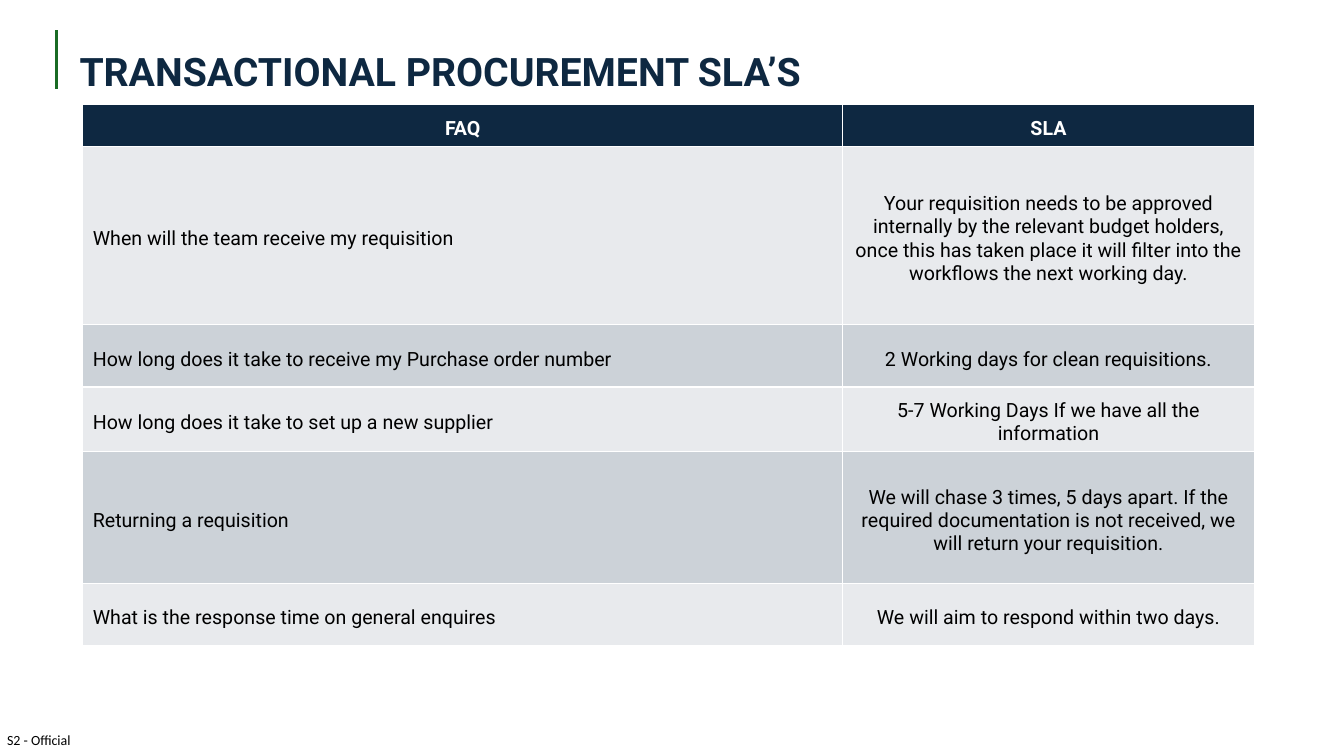
from lxml.etree import SubElement
from pptx import Presentation
from pptx.dml.color import RGBColor
from pptx.enum.shapes import MSO_CONNECTOR
from pptx.enum.text import MSO_ANCHOR, PP_ALIGN
from pptx.oxml.ns import qn
from pptx.util import Inches, Pt

COLORS = {
    "navy": "0E2841",
    "green": "196B24",
    "white": "FFFFFF",
    "black": "000000",
    "light": "E8EAED",
    "dark": "CCD2D8",
}
FORMATS = {
    "title": {"name": "Roboto", "size": Pt(28), "bold": True},
    "header": {"name": "Roboto", "size": Pt(14), "bold": True},
    "body": {"name": "Roboto", "size": Pt(14), "bold": False},
    "label": {"name": "Calibri", "size": Pt(10), "bold": False},
}
COLUMN_WIDTHS = [7.54, 4.08]
ROW_HEIGHTS = [0.41, 1.77, 0.62, 0.62, 1.31, 0.62]
ROWS = [
    ("FAQ", "SLA"),
    ("When will the team receive my requisition",
     "Your requisition needs to be approved internally by the relevant budget "
     "holders, once this has taken place it will filter into the workflows "
     "the next working day."),
    ("How long does it take to receive my Purchase order number",
     "2 Working days for clean requisitions."),
    ("How long does it take to set up a new supplier",
     "5-7 Working Days If we have all the information"),
    ("Returning a requisition",
     "We will chase 3 times, 5 days apart. If the required documentation is "
     "not received, we will return your requisition."),
    ("What is the response time on general enquires",
     "We will aim to respond within two days."),
]


def rgb(color):
    return RGBColor.from_string(COLORS[color])


def set_attributes(target, values):
    for name, value in values.items():
        setattr(target, name, value)


def set_margins(target, margins):
    for side, margin in zip(("left", "top", "right", "bottom"), margins):
        setattr(target, f"margin_{side}", Inches(margin))


def write_text(paragraph, text, style, color):
    paragraph.text = text
    set_attributes(paragraph.font, FORMATS[style])
    paragraph.font.color.rgb = rgb(color)


def add_text(slide, box, text, style, color, margins, wrap, anchor):
    shape = slide.shapes.add_textbox(*map(Inches, box))
    frame = shape.text_frame
    set_attributes(frame, {"word_wrap": wrap, "vertical_anchor": anchor})
    set_margins(frame, margins)
    write_text(frame.paragraphs[0], text, style, color)
    return frame.paragraphs[0]


def add_line(slide, start, end, color, width):
    connector = slide.shapes.add_connector(
        MSO_CONNECTOR.STRAIGHT, *map(Inches, start + end))
    connector.line.color.rgb = rgb(color)
    connector.line.width = Pt(width)
    SubElement(connector._element.spPr, qn("a:effectLst"))


def add_borders(cell, color, width):
    properties = cell._tc.get_or_add_tcPr()
    for side in ("lnL", "lnR", "lnT", "lnB"):
        line = SubElement(properties, qn(f"a:{side}"), w=str(Pt(width)))
        fill = SubElement(line, qn("a:solidFill"))
        SubElement(fill, qn("a:srgbClr"), val=COLORS[color])


def fill_cell(cell, text, row, column):
    is_header = row == 0
    add_borders(cell, "white", 1)
    cell.fill.solid()
    cell.fill.fore_color.rgb = rgb(
        "navy" if is_header else "light" if row % 2 else "dark")
    cell.vertical_anchor = MSO_ANCHOR.MIDDLE
    set_margins(cell, (0.1, 0.12, 0.1, 0.05))
    paragraph = cell.text_frame.paragraphs[0]
    write_text(paragraph, text, "header" if is_header else "body",
               "white" if is_header else "black")
    centred = is_header or column == 1
    paragraph.alignment = PP_ALIGN.CENTER if centred else PP_ALIGN.LEFT


def add_sla_table(slide, left, top):
    table = slide.shapes.add_table(
        len(ROWS), len(COLUMN_WIDTHS), Inches(left), Inches(top),
        Inches(sum(COLUMN_WIDTHS)), Inches(sum(ROW_HEIGHTS))).table
    for column, width in zip(table.columns, COLUMN_WIDTHS):
        column.width = Inches(width)
    for row, height in zip(table.rows, ROW_HEIGHTS):
        row.height = Inches(height)
    for row, texts in enumerate(ROWS):
        for column, text in enumerate(texts):
            fill_cell(table.cell(row, column), text, row, column)


def main():
    presentation = Presentation()
    presentation.slide_width = Inches(13.33)
    presentation.slide_height = Inches(7.5)
    slide = presentation.slides.add_slide(presentation.slide_layouts[6])

    # Classification label
    add_text(slide, (0.07, 7.26, 0.66, 0.17), "S2 - Official", "label",
             "black", (0, 0, 0, 0), False, MSO_ANCHOR.TOP)

    # Title with accent line
    add_line(slide, (0.56, 0.88), (0.56, 0.3), "green", 2.25)
    title = add_text(slide, (0.69, 0.31, 9.98, 0.84),
                     "TRANSACTIONAL PROCUREMENT SLA’S", "title", "navy",
                     (0.1, 0.05, 0.1, 0.05), True, MSO_ANCHOR.MIDDLE)
    title.line_spacing = 0.9

    # Questions and service levels
    add_sla_table(slide, 0.82, 1.04)

    presentation.save("out.pptx")


if __name__ == "__main__":
    main()
